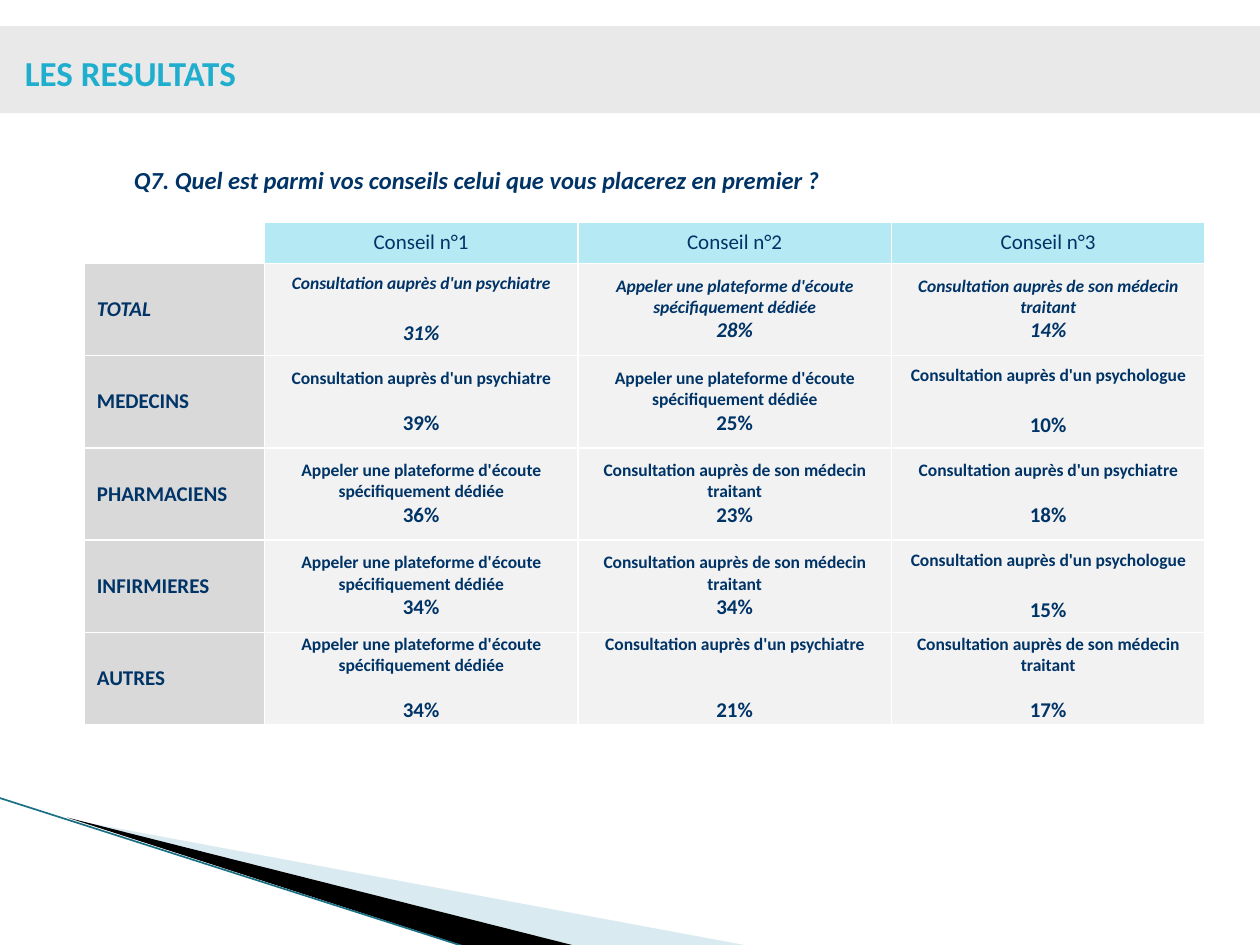
from lxml import etree
from pptx import Presentation
from pptx.dml.color import RGBColor
from pptx.enum import shapes, text
from pptx.oxml import ns
from pptx.util import Cm, Pt

NAVY = "003366"
FONT = "Calibri"

# Advice wordings
PSY = "Consultation auprès d'un psychiatre"
LOGUE = "Consultation auprès d'un psychologue"
DOC = "Consultation auprès de son médecin traitant"
CALL = "Appeler une plateforme d'écoute spécifiquement dédiée"

HEADS = ["", "Conseil n°1", "Conseil n°2", "Conseil n°3"]
# Each answer: advice, share, gap in points above the share
ROWS = [
    ("TOTAL", (PSY, "31%", 15), (CALL, "28%", 0), (DOC, "14%", 0)),
    ("MEDECINS", (PSY, "39%", 12), (CALL, "25%", 0), (LOGUE, "10%", 15)),
    ("PHARMACIENS", (CALL, "36%", 0), (DOC, "23%", 0), (PSY, "18%", 12)),
    ("INFIRMIERES", (CALL, "34%", 0), (DOC, "34%", 0), (LOGUE, "15%", 15)),
    ("AUTRES", (CALL, "34%", 12), (PSY, "21%", 24), (DOC, "17%", 12)),
]


def color(code):
    return RGBColor.from_string(code)


def paint(item, code):
    item.fill.solid()
    item.fill.fore_color.rgb = color(code)


def style(para, size, code=NAVY, bold=False, slant=False):
    font = para.font
    font.name, font.size = FONT, Pt(size)
    font.bold, font.italic = bold, slant
    font.color.rgb = color(code)
    for run in para.runs:
        run.font.name, run.font.size = FONT, Pt(size)
        run.font.bold, run.font.italic = bold, slant
        run.font.color.rgb = color(code)


def wedge(slide, points, code, alpha=None):
    start, *rest = [(Cm(x), Cm(y)) for x, y in points]
    form = slide.shapes.build_freeform(*start)
    form.add_line_segments(rest, close=True)
    shape = form.convert_to_shape()
    shape.shadow.inherit = False
    paint(shape, code)
    shape.line.fill.background()
    if alpha:
        tone = shape.fill._xPr.find(".//" + ns.qn("a:srgbClr"))
        etree.SubElement(tone, ns.qn("a:alpha"), val=str(alpha * 1000))


def stripe(slide, x1, y1, x2, y2, code):
    line = slide.shapes.add_connector(
        shapes.MSO_CONNECTOR.STRAIGHT, Cm(x1), Cm(y1), Cm(x2), Cm(y2))
    line.line.color.rgb = color(code)
    line.line.width = Pt(0.95)
    etree.SubElement(line._element.spPr, ns.qn("a:effectLst"))


def band(slide, x, y, w, h, code):
    shape = slide.shapes.add_shape(
        shapes.MSO_SHAPE.RECTANGLE, Cm(x), Cm(y), Cm(w), Cm(h))
    shape.shadow.inherit = False
    paint(shape, code)
    shape.line.fill.background()


def label(slide, x, y, w, h, words, size, code, slant=False):
    frame = slide.shapes.add_textbox(Cm(x), Cm(y), Cm(w), Cm(h)).text_frame
    frame.word_wrap = True
    frame.text = words
    style(frame.paragraphs[0], size, code, True, slant)
    return frame


def edge(cell):
    props = cell._tc.get_or_add_tcPr()
    for side in ("lnL", "lnR", "lnT", "lnB"):
        line = etree.SubElement(props, ns.qn("a:" + side), w=str(Pt(1)))
        fill = etree.SubElement(line, ns.qn("a:solidFill"))
        etree.SubElement(fill, ns.qn("a:srgbClr"), val="FFFFFF")


def fill_cell(cell, words, code, **look):
    edge(cell)
    paint(cell, code)
    cell.vertical_anchor = text.MSO_ANCHOR.MIDDLE
    cell.text_frame.text = words
    style(cell.text_frame.paragraphs[0], 12, **look)


def answer(cell, advice, share, gap, slant):
    fill_cell(cell, advice + "\n" + share, "F2F2F2")
    cell.margin_top = cell.margin_bottom = 0
    top, low = cell.text_frame.paragraphs
    for para, size in ((top, 10), (low, 12)):
        para.alignment = text.PP_ALIGN.CENTER
        style(para, size, bold=True, slant=slant)
    if gap:
        low.space_before = Pt(gap)


def grid(slide, x, y):
    wide, first, tall, head = 6.32, 3.63, 1.86, 0.83
    table = slide.shapes.add_table(
        len(ROWS) + 1, len(HEADS), Cm(x), Cm(y),
        Cm(first + 3 * wide), Cm(head + len(ROWS) * tall)).table
    table.horz_banding = table.first_row = False
    for i, col in enumerate(table.columns):
        col.width = Cm(wide if i else first)
    for i, row in enumerate(table.rows):
        row.height = Cm(tall if i else head)

    # Header row
    for i, name in enumerate(HEADS):
        cell = table.cell(0, i)
        fill_cell(cell, name, "B5E9F4" if name else "FFFFFF")
        cell.text_frame.paragraphs[0].alignment = text.PP_ALIGN.CENTER

    # One row per group; the total is in italics
    for r, (group, *picks) in enumerate(ROWS, 1):
        slant = r == 1
        fill_cell(table.cell(r, 0), group, "D9D9D9", bold=True, slant=slant)
        for c, pick in enumerate(picks, 1):
            answer(table.cell(r, c), *pick, slant)


def main():
    deck = Presentation()
    deck.slide_width, deck.slide_height = Cm(25.4), Cm(19.05)
    slide = deck.slides.add_slide(deck.slide_layouts[6])

    # Corner decoration
    wedge(slide, [(1.4, 16.52), (15.11, 19.07), (11.58, 19.07)], "A0CBDC", 40)
    wedge(slide, [(1.35, 16.48), (11.61, 19.07), (9.45, 19.1)], "000000")
    stripe(slide, -0.03, 16.08, 9.42, 19.1, "197084")

    # Title band and question
    band(slide, 0, 0.53, 25.4, 1.75, "E9E9E9")
    ask = label(slide, 1.3, 3.02, 23.19, 1,
                "Q7. Quel est parmi vos conseils celui que vous placerez "
                "en premier ?", 14, NAVY, True)
    ask.margin_left = Cm(1.4)
    ask.paragraphs[0].line_spacing = 1.3

    # Results
    grid(slide, 1.7, 4.48)
    label(slide, 0.25, 0.92, 15.52, 1.02, "LES RESULTATS", 20, "1FAECD")

    deck.save("out.pptx")


if __name__ == "__main__":
    main()
